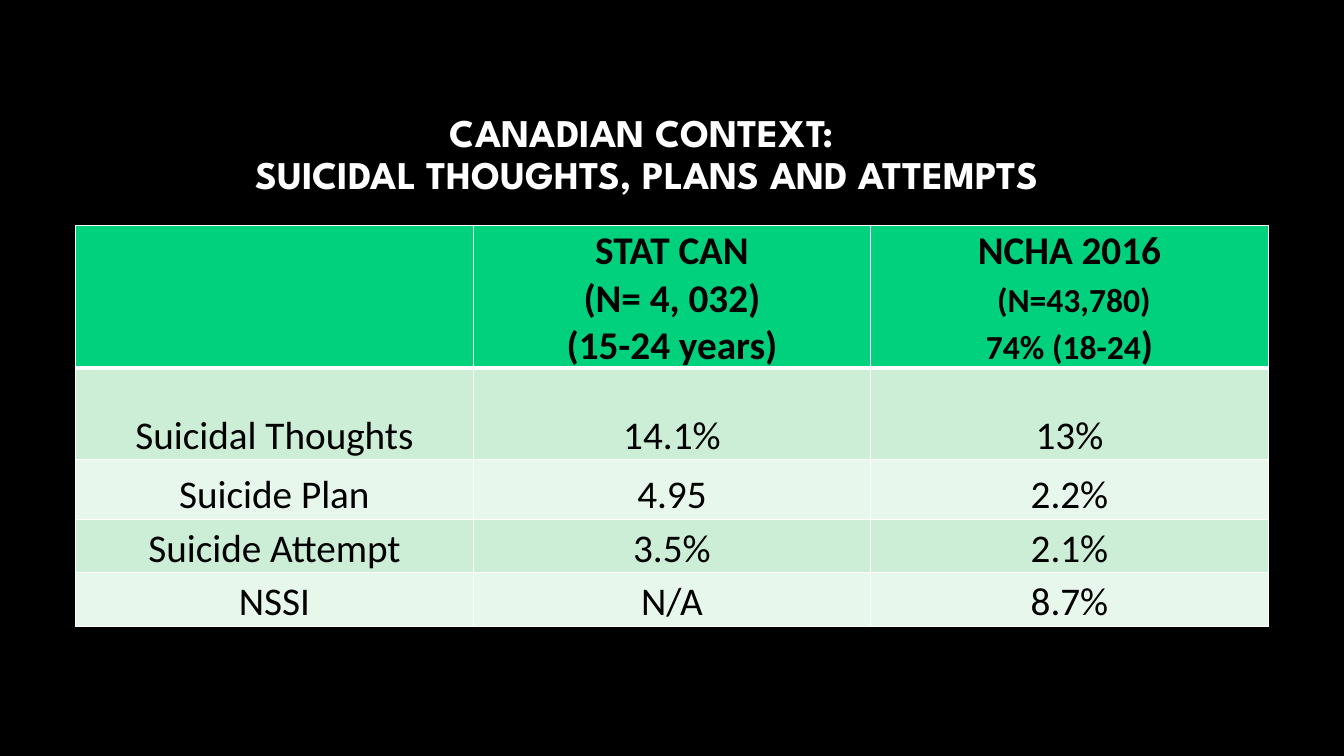
from lxml import etree
from pptx import Presentation
from pptx.dml.color import RGBColor
from pptx.enum.text import MSO_ANCHOR, PP_ALIGN
from pptx.oxml.ns import qn
from pptx.util import Pt

CENTER = PP_ALIGN.CENTER
MIDDLE = MSO_ANCHOR.MIDDLE
BOTTOM = MSO_ANCHOR.BOTTOM

BLACK = RGBColor(0x00, 0x00, 0x00)
WHITE = RGBColor(0xFF, 0xFF, 0xFF)
GREEN = RGBColor(0x01, 0xD1, 0x7D)
MINT = RGBColor(0xCC, 0xEE, 0xD7)
PALE = RGBColor(0xE7, 0xF7, 0xEC)

# Each header cell is a list of lines; each line is a list of (text, size) runs
HEADS = [
    [],
    [[("STAT CAN", 28)], [("(N= 4, 032)", 28)], [("(15-24 years)", 28)]],
    [[("NCHA 2016", 28)],
     [(" ", 28), ("(N=43,780)", 24)],
     [("74% (18-24", 24), (")", 28)]],
]
ROWS = [
    ("Suicidal Thoughts", "14.1%", "13%"),
    ("Suicide Plan", "4.95", "2.2%"),
    ("Suicide Attempt", "3.5%", "2.1%"),
    ("NSSI", "N/A", "8.7%"),
]
HEIGHTS = (65.5, 65.5, 42.5, 38.2, 38.2)


class Deck:
    head_font = "League Spartan"
    body_font = "Calibri"

    def __init__(self, width, height):
        self.prs = Presentation()
        self.prs.slide_width = Pt(width)
        self.prs.slide_height = Pt(height)
        self.slide = self.prs.slides.add_slide(self.prs.slide_layouts[6])
        fill = self.slide.background.fill
        fill.solid()
        fill.fore_color.rgb = BLACK

    def run(self, para, text, size, font, color, bold):
        run = para.add_run()
        run.text = text
        run.font.size = Pt(size)
        run.font.name = font
        run.font.color.rgb = color
        run.font.bold = bold

    def title(self, lines, left, top, width, height):
        box = self.slide.shapes.add_textbox(
            Pt(left), Pt(top), Pt(width), Pt(height))
        frame = box.text_frame
        frame.word_wrap = True
        frame.vertical_anchor = MIDDLE
        para = frame.paragraphs[0]
        para.alignment = CENTER
        para.line_spacing = 0.9
        for i, line in enumerate(lines):
            if i:
                para.add_line_break()
            self.run(para, line, 28, self.head_font, WHITE, True)

    def border(self, cell, low):
        props = cell._tc.get_or_add_tcPr()
        for side, weight in (("L", 1), ("R", 1), ("T", 1), ("B", low)):
            line = etree.SubElement(props, qn("a:ln" + side), w=str(Pt(weight)))
            solid = etree.SubElement(line, qn("a:solidFill"))
            etree.SubElement(solid, qn("a:srgbClr"), val=str(WHITE))

    def cell(self, cell, lines, color, bold=False, low=1):
        self.border(cell, low)
        cell.fill.solid()
        cell.fill.fore_color.rgb = color
        cell.vertical_anchor = BOTTOM
        cell.margin_left = cell.margin_right = cell.margin_top = Pt(0.75)
        cell.margin_bottom = Pt(0)
        frame = cell.text_frame
        for i, line in enumerate(lines):
            para = frame.add_paragraph() if i else frame.paragraphs[0]
            para.alignment = CENTER
            for text, size in line:
                self.run(para, text, size, self.body_font, BLACK, bold)

    def table(self, heads, rows, heights, left, top, width):
        table = self.slide.shapes.add_table(
            len(heights), len(heads), Pt(left), Pt(top),
            Pt(width), Pt(sum(heights))).table
        for col in table.columns:
            col.width = Pt(width / len(heads))
        for row, height in zip(table.rows, heights):
            row.height = Pt(height)
        for c, lines in enumerate(heads):
            self.cell(table.cell(0, c), lines, GREEN, bold=True, low=3)
        for r, row in enumerate(rows, 1):
            for c, text in enumerate(row):
                self.cell(table.cell(r, c), [[(text, 28)]],
                          MINT if r % 2 else PALE, low=1)
        # The first body row shares the thick line under the header
        for c in range(len(heads)):
            edge = table.cell(1, c)._tc.tcPr.find(qn("a:lnT"))
            edge.set("w", str(Pt(3)))


def main():
    deck = Deck(960, 540)

    # Heading
    deck.title(["CANADIAN CONTEXT: ", "SUICIDAL THOUGHTS, PLANS AND ATTEMPTS"],
               18, 60.5, 888.5, 101.5)

    # Comparison of the two surveys
    deck.table(HEADS, ROWS, HEIGHTS, 54, 161.3, 852)

    deck.prs.save("out.pptx")


if __name__ == "__main__":
    main()
